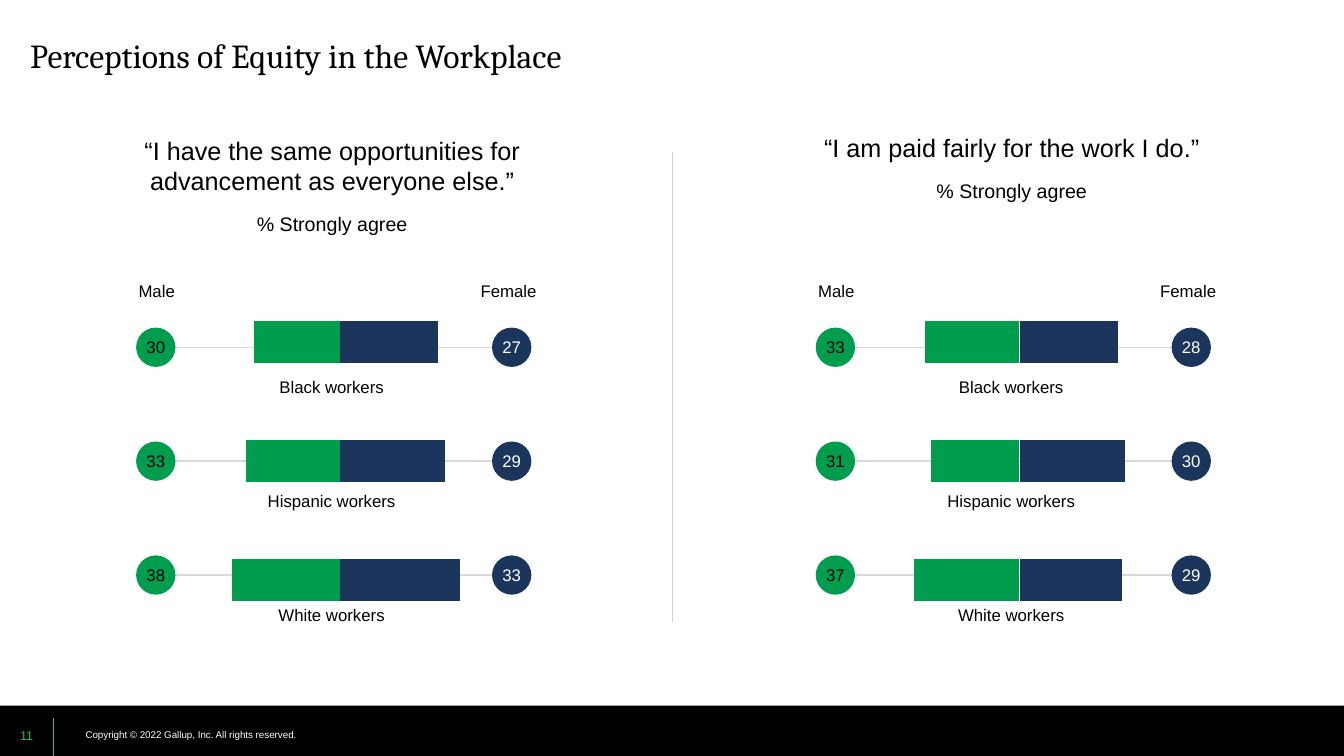
from lxml import etree
from pptx import Presentation
from pptx.chart.data import CategoryChartData
from pptx.dml.color import RGBColor
from pptx.enum import chart as ch, shapes, text
from pptx.oxml import ns, parse_xml
from pptx.util import Inches, Pt

# Content
TITLE = "Perceptions of Equity in the Workplace"
RIGHTS = "Copyright © 2022 Gallup, Inc. All rights reserved."
PAGE = "11"
UNIT = "% Strongly agree"
GROUPS = ["Black workers", "Hispanic workers", "White workers"]
# Bars run from the bottom row up; limit is the far end of each value axis
PANELS = [
    dict(quote="“I have the same opportunities for advancement as everyone else.”",
         top=1.29, high=1.11, male=[30, 33, 38], female=[27, 29, 33],
         left=([-100, -87, -79], -132), right=([100, 88, 82], 106)),
    dict(quote="“I am paid fairly for the work I do.”",
         top=1.26, high=0.81, male=[33, 31, 37], female=[28, 30, 29],
         left=([-100, -84, -89], -135), right=([97, 100, 93], 120)),
]

BLACK = RGBColor(0x00, 0x00, 0x00)
WHITE = RGBColor(0xFF, 0xFF, 0xFF)
GREEN = RGBColor(0x00, 0x9D, 0x4F)
NAVY = RGBColor(0x1B, 0x35, 0x5D)
LIME = RGBColor(0x16, 0xC6, 0x4F)
RULE = RGBColor(0xCF, 0xD2, 0xD3)
PALE = RGBColor(0xD9, 0xD9, 0xD9)

SHIFT = 6.74   # from one panel to the next
PITCH = 1.13   # from one row to the next
DOT = 0.39
MID = text.MSO_ANCHOR.MIDDLE
CENTER = text.PP_ALIGN.CENTER

deck = Presentation()
deck.slide_width, deck.slide_height = Inches(13.33), Inches(7.5)
slide = deck.slides.add_slide(deck.slide_layouts[5])
parts = slide.shapes


def style(para, size, color, align=CENTER, face="Arial"):
    para.alignment = align
    for run in para.runs:
        run.font.size = Pt(size)
        run.font.name = face
        run.font.color.rgb = color


def inset(frame, *sides):
    (frame.margin_left, frame.margin_top,
     frame.margin_right, frame.margin_bottom) = map(Inches, sides)


def label(words, box, size, color=BLACK, pad=0.1, align=CENTER, anchor=None):
    frame = parts.add_textbox(*map(Inches, box)).text_frame
    frame.word_wrap = True
    inset(frame, 0.1, pad, 0.1, pad)
    frame.vertical_anchor = anchor
    frame.text = words
    style(frame.paragraphs[0], size, color, align)
    return frame


def shape(kind, box, fill):
    item = parts.add_shape(kind, *map(Inches, box))
    item.shadow.inherit = False
    item.fill.solid()
    item.fill.fore_color.rgb = fill
    item.line.fill.background()
    return item


def line(x1, y1, x2, y2, color, width=1):
    item = parts.add_connector(shapes.MSO_CONNECTOR.STRAIGHT,
                               *map(Inches, (x1, y1, x2, y2)))
    item.line.color.rgb = color
    item.line.width = Pt(width)
    etree.SubElement(item._element.spPr, ns.qn("a:effectLst"))


def dot(x, y, value, fill, color):
    frame = shape(shapes.MSO_SHAPE.OVAL, (x, y, DOT, DOT), fill).text_frame
    inset(frame, 0, 0, 0, 0)
    frame.vertical_anchor = MID
    frame.text = str(value)
    style(frame.paragraphs[0], 12, color)


def bars(x, values, limit, fill, start, span):
    data = CategoryChartData()
    data.categories = ["1", "2", "3"]
    data.add_series("Series 1", values)
    chart = parts.add_chart(ch.XL_CHART_TYPE.BAR_CLUSTERED, Inches(x), Inches(2.73),
                            Inches(1.46), Inches(3.69), data).chart
    chart.has_legend = chart.has_title = False
    chart.font.size, chart.font.name = Pt(10), "Arial"
    chart.font.color.rgb = BLACK
    axis = chart.value_axis
    axis.minimum_scale, axis.maximum_scale = min(0, limit), max(0, limit)
    axis.has_major_gridlines = False
    axis.visible = chart.category_axis.visible = False
    plot = chart.plots[0]
    plot.gap_width, plot.vary_by_categories = 182, False
    series = plot.series[0]
    series.invert_if_negative = False
    series.format.fill.solid()
    series.format.fill.fore_color.rgb = fill

    # Clear background and fixed plot area
    root = chart._chartSpace
    root.find(ns.qn("c:chart")).addnext(parse_xml(
        f'<c:spPr {ns.nsdecls("c", "a")}><a:noFill/><a:ln><a:noFill/></a:ln></c:spPr>'))
    area = root.find(".//" + ns.qn("c:plotArea"))
    for old in area.findall(ns.qn("c:layout")):
        area.remove(old)
    place = "".join(f'<c:{key} val="{val}"/>' for key, val in (
        ("layoutTarget", "inner"), ("xMode", "edge"), ("yMode", "edge"),
        ("x", start), ("y", 0.02), ("w", span), ("h", 0.96)))
    area.insert(0, parse_xml(f'<c:layout {ns.nsdecls("c")}><c:manualLayout>'
                             f'{place}</c:manualLayout></c:layout>'))


# Title
title = parts.title
title.left, title.top, title.width, title.height = map(Inches, (0, 0, 13.33, 1.06))
title.text_frame.text = TITLE
title.text_frame.vertical_anchor = text.MSO_ANCHOR.TOP
inset(title.text_frame, 0.3, 0.35, 0.3, 0.3)
style(title.text_frame.paragraphs[0], 24, BLACK, text.PP_ALIGN.LEFT, "Cambria")

# Footer
shape(shapes.MSO_SHAPE.RECTANGLE, (0, 7, 13.33, 0.5), BLACK)
label(RIGHTS, (0.75, 7.18, 3.75, 0.22), 7, WHITE, 0.05, text.PP_ALIGN.LEFT, MID)
line(0.53, 7.5, 0.53, 7.12, LIME, 0.75)
label(PAGE, (0, 7.1, 0.53, 0.4), 9, LIME, 0.05, anchor=MID)

# Divider between the panels
line(6.67, 1.51, 6.67, 6.17, RULE)

# Panels
for col, panel in enumerate(PANELS):
    x = col * SHIFT
    head = label(panel["quote"], (x + 1.28, panel["top"], 4.03, panel["high"]), 18, pad=0.05)
    unit = head.add_paragraph()
    unit.text = UNIT
    unit.space_before = Pt(12)
    style(unit, 14, BLACK)

    for name, left in (("Male", 1.09), ("Female", 4.58)):
        label(name, (x + left, 2.69, 0.93, 0.4), 12)

    rows = zip(GROUPS, panel["male"], panel["female"])
    for row, (group, male, female) in enumerate(rows):
        y = 3.25 + row * PITCH
        for left in (1.54, 3.36):
            line(x + left, y + DOT / 2, x + left + 1.7, y + DOT / 2, PALE)
        dot(x + 1.35, y, male, GREEN, BLACK)
        dot(x + 4.88, y, female, NAVY, WHITE)
        label(group, (x + 1.66, y + DOT, 3.26, 0.4), 12)

    bars(x + 3.2, *panel["right"], NAVY, 0.12, 0.86)
    bars(x + 1.94, *panel["left"], GREEN, 0.01, 0.97)

deck.save("out.pptx")
